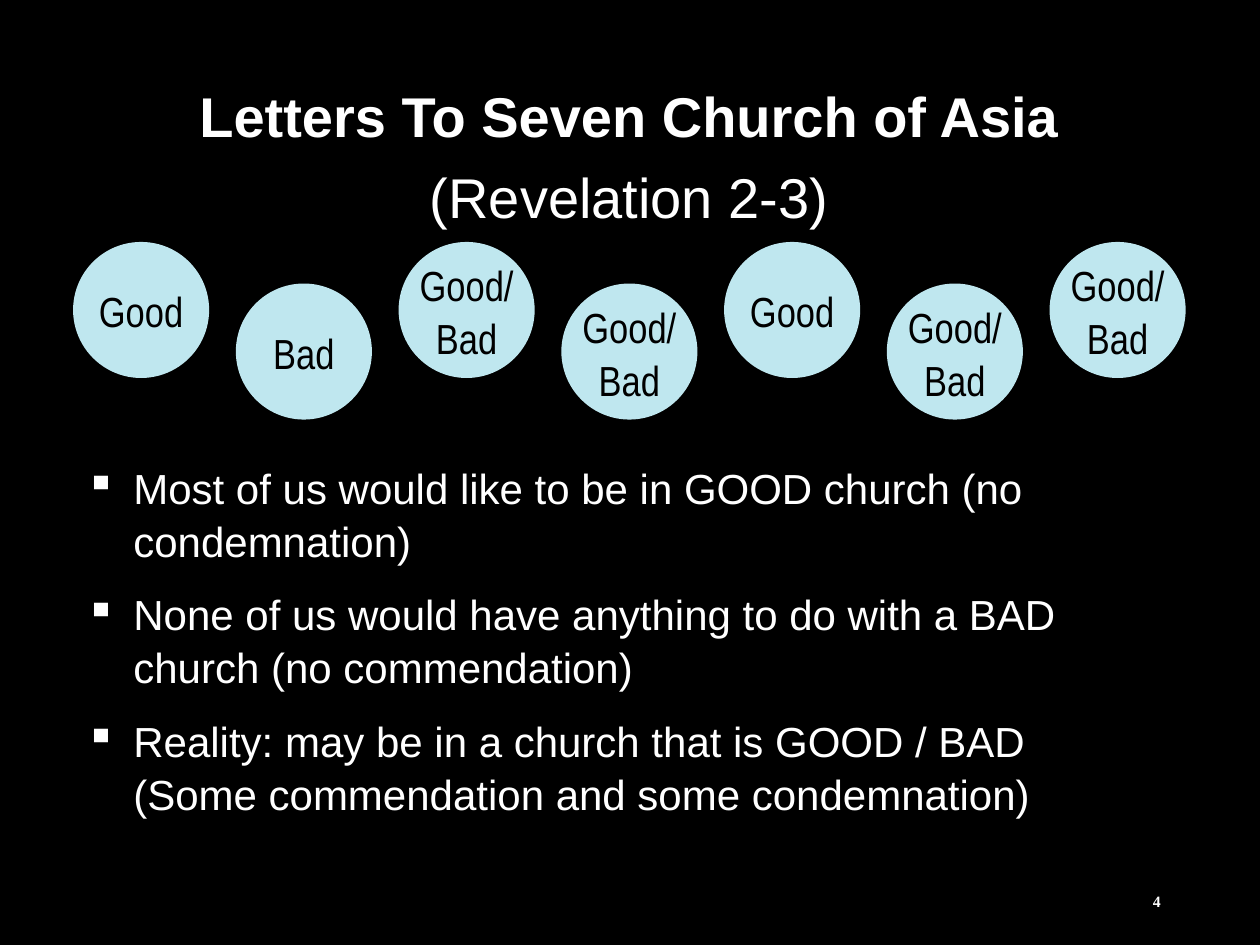
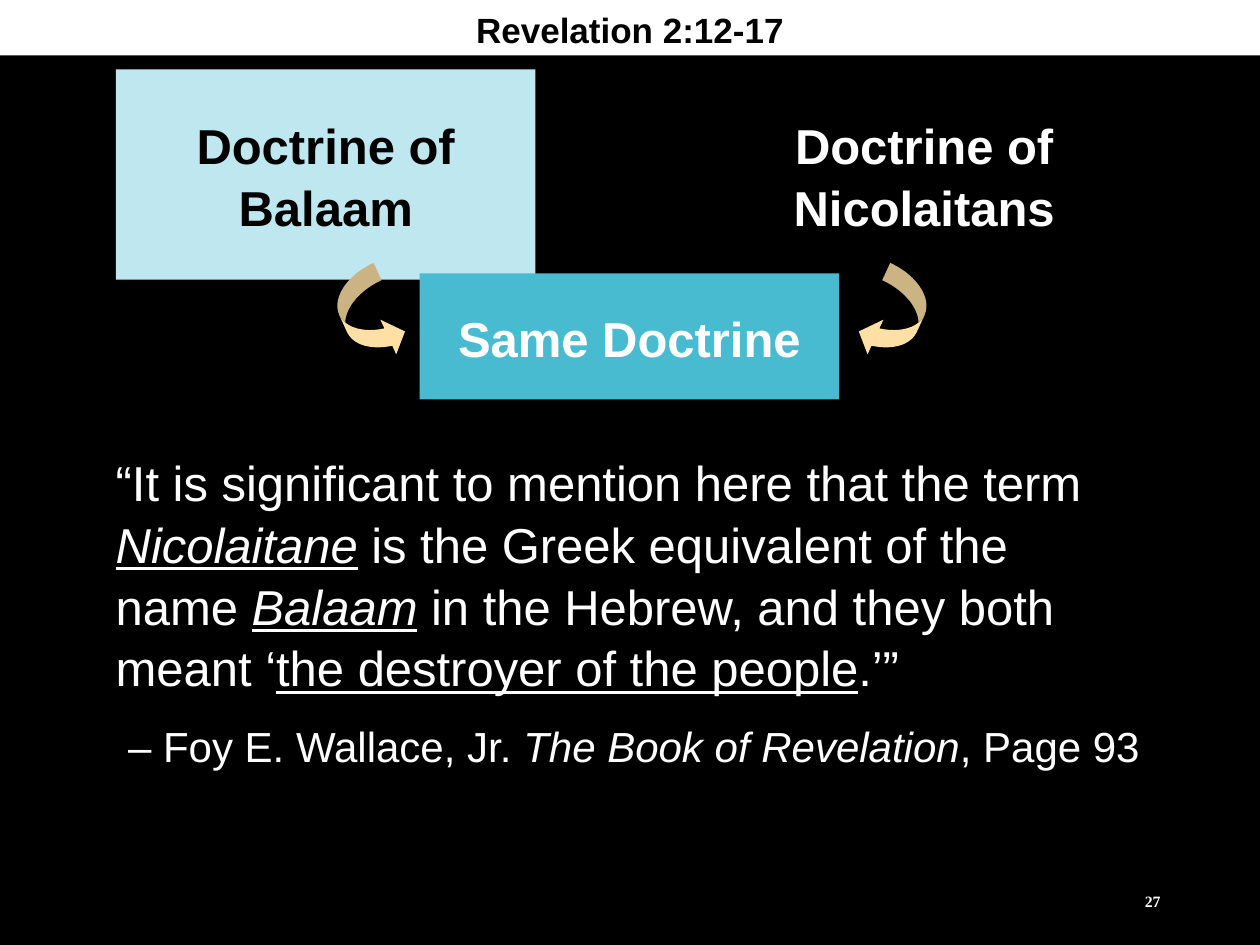
"""Build two slides on the letters of Revelation."""
from lxml.etree import SubElement
from pptx import Presentation
from pptx.dml.color import RGBColor
from pptx.enum.shapes import MSO_SHAPE
from pptx.enum.text import MSO_ANCHOR, MSO_AUTO_SIZE, PP_ALIGN
from pptx.oxml.ns import qn
from pptx.util import Inches, Pt

BLACK = RGBColor(0x00, 0x00, 0x00)
WHITE = RGBColor(0xFF, 0xFF, 0xFF)
PALE = RGBColor(0xBF, 0xE7, 0xEF)
TEAL = RGBColor(0x49, 0xBB, 0xD1)
SAND = RGBColor(0xFE, 0xE0, 0xA4)


def write(frame, lines, size, color=WHITE, bold=False, align=PP_ALIGN.CENTER,
          gap=0, face="Arial", bullet=None, anchor=MSO_ANCHOR.TOP, wrap=True):
    """Fill a text frame; a line is a string or a list of (text, marks) runs."""
    frame.word_wrap = wrap
    frame.auto_size = MSO_AUTO_SIZE.NONE
    frame.vertical_anchor = anchor
    for i, line in enumerate(lines):
        para = frame.add_paragraph() if i else frame.paragraphs[0]
        para.alignment = align
        para.line_spacing = 1.05
        para.space_before = Pt(gap if i else 0)
        if bullet:
            props = para._p.get_or_add_pPr()
            props.set("marL", str(Inches(0.38)))
            props.set("indent", str(-Inches(0.38)))
            SubElement(props, qn("a:buChar"), char=bullet)
        if isinstance(line, str):
            para.text = line
        else:
            for text, marks in line:
                run = para.add_run()
                run.text = text
                if "i" in marks:
                    run.font.italic = True
                if "u" in marks:
                    run.font.underline = True
        font = para.font
        font.name, font.size, font.bold = face, Pt(size), bold
        font.color.rgb = color


def draw(slide, kind, left, top, width, height, fill):
    """Add a flat shape without an outline."""
    shape = slide.shapes.add_shape(kind, Inches(left), Inches(top),
                                   Inches(width), Inches(height))
    shape.shadow.inherit = False
    shape.fill.solid()
    shape.fill.fore_color.rgb = fill
    shape.line.fill.background()
    return shape


deck = Presentation()
deck.slide_width, deck.slide_height = Inches(10), Inches(7.5)

pages = []
for number, area in (("4", (0.58, 0.57, 8.83, 1.26)), ("27", (0, 0, 10, 0.44))):
    page = deck.slides.add_slide(deck.slide_layouts[5])
    page.background.fill.solid()
    page.background.fill.fore_color.rgb = BLACK
    title = page.shapes.title
    title.left, title.top, title.width, title.height = map(Inches, area)
    foot = page.shapes.add_textbox(Inches(7.06), Inches(6.95), Inches(2.25), Inches(0.4))
    write(foot.text_frame, [number], 9, bold=True, align=PP_ALIGN.RIGHT,
          face="Times New Roman", anchor=MSO_ANCHOR.MIDDLE)
    pages.append(page)
first, second = pages

frame = first.shapes.title.text_frame
write(frame, ["Letters To Seven Church of Asia", "(Revelation 2-3)"], 32, gap=6)
frame.paragraphs[0].font.bold = True

grades = ["Good", "Bad", "Good/Bad", "Good/Bad", "Good", "Good/Bad", "Good/Bad"]
for i, grade in enumerate(grades):
    disc = draw(first, MSO_SHAPE.OVAL, 0.58 + 7.75 / 6 * i, 1.92 + 0.33 * (i % 2),
                1.08, 1.08, PALE)
    write(disc.text_frame, grade.replace("/", "/\n").split("\n"), 24, BLACK,
          face="Arial Narrow", anchor=MSO_ANCHOR.MIDDLE, wrap=False)

points = first.shapes.add_textbox(Inches(0.58), Inches(3.6), Inches(8.75), Inches(2.93))
write(points.text_frame, [
    "Most of us would like to be in GOOD church (no condemnation)",
    "None of us would have anything to do with a BAD church (no commendation)",
    "Reality: may be in a church that is GOOD / BAD\v(Some commendation and some condemnation)",
], 24, align=PP_ALIGN.LEFT, gap=12, bullet="▪")

band = second.shapes.title
band.fill.solid()
band.fill.fore_color.rgb = WHITE
write(band.text_frame, ["Revelation 2:12-17"], 20, BLACK, bold=True)

cards = [
    (0.92, 0.55, 1.67, PALE, BLACK, ["Doctrine of", "Balaam"]),
    (5.67, 0.55, 1.67, BLACK, WHITE, ["Doctrine of", "Nicolaitans"]),
    (3.33, 2.17, 1, TEAL, WHITE, ["Same Doctrine"]),
]
for left, top, height, fill, ink, lines in cards:
    card = draw(second, MSO_SHAPE.RECTANGLE, left, top, 3.33, height, fill)
    write(card.text_frame, lines, 28, ink, bold=True,
          anchor=MSO_ANCHOR.MIDDLE, wrap=False)

for left, turn in ((2.72, -24.6), (6.89, 24.6)):
    arrow = draw(second, MSO_SHAPE.CURVED_RIGHT_ARROW, left, 2.14, 0.42, 0.75, SAND)
    arrow.rotation = turn
    for i, value in enumerate((0.36, 0.72, 0.33)):
        arrow.adjustments[i] = value
    if turn > 0:
        arrow._element.spPr.xfrm.set("flipH", "1")

quote = second.shapes.add_textbox(Inches(0.82), Inches(3.52), Inches(8.33), Inches(2.59))
write(quote.text_frame, [
    [("“It is significant to mention here that the term ", ""), ("Nicolaitane", "iu"),
     (" is the Greek equivalent of the name ", ""), ("Balaam", "iu"),
     (" in the Hebrew, and they both meant ‘", ""),
     ("the destroyer of the people", "u"), (".’”", "")],
    [(" – Foy E. Wallace, Jr. ", ""), ("The Book of Revelation", "i"), (", Page 93", "")],
], 28, align=PP_ALIGN.LEFT, gap=12)
source = quote.text_frame.paragraphs[1]
source.alignment = PP_ALIGN.CENTER
source.font.size = Pt(24)

deck.save("out.pptx")
